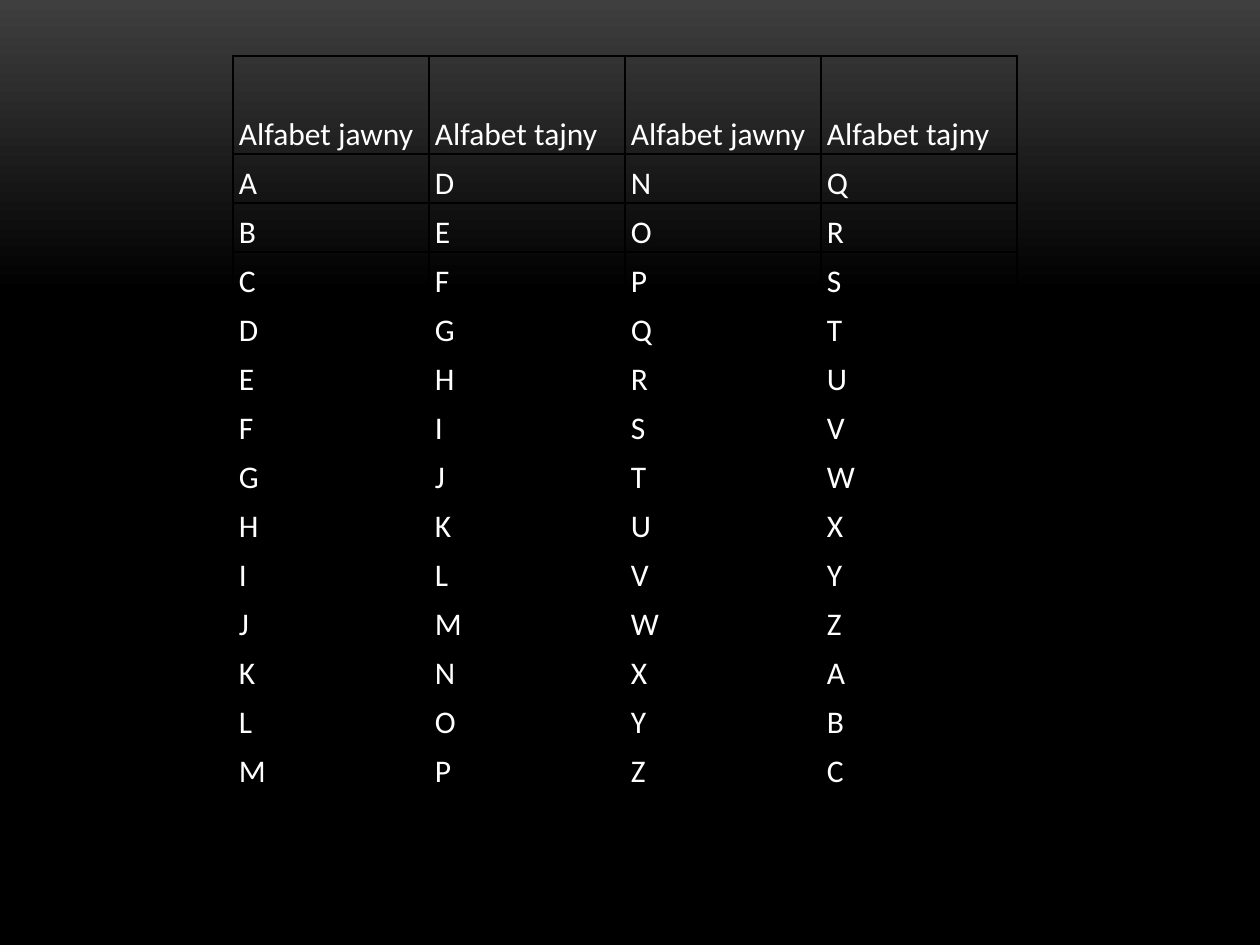
from lxml import etree
from pptx import Presentation
from pptx.dml.color import RGBColor
from pptx.enum.text import MSO_ANCHOR
from pptx.oxml.ns import qn
from pptx.util import Pt

PX = 914400 // 126
BOTTOM = MSO_ANCHOR.BOTTOM
ALPHABET = "ABCDEFGHIJKLMNOPQRSTUVWXYZ"
SHIFT = 3
HALF = len(ALPHABET) // 2
COLUMN_WIDTH, HEADER_HEIGHT, ROW_HEIGHT = 196, 98, 49
CELL_MARGIN = 6


def color(value):
    return RGBColor.from_string(value)


def add_borders(cell, value, width):
    properties = cell._tc.get_or_add_tcPr()
    for side in ("a:lnL", "a:lnR", "a:lnT", "a:lnB"):
        line = etree.SubElement(properties, qn(side), w=str(Pt(width)))
        fill = etree.SubElement(line, qn("a:solidFill"))
        etree.SubElement(fill, qn("a:srgbClr"), val=value)


presentation = Presentation()
presentation.slide_width = 1260 * PX
presentation.slide_height = 945 * PX
slide = presentation.slides.add_slide(presentation.slide_layouts[6])

# Background: dark grey fading down to black
background = slide.background.fill
background.gradient()
background.gradient_angle = 270
for stop, (position, value) in zip(background.gradient_stops,
                                   ((0, "3F3F3F"), (0.31, "000000"))):
    stop.position = position
    stop.color.rgb = color(value)

# Cipher rows: each half of the alphabet beside its shifted letters
secret = ALPHABET[SHIFT:] + ALPHABET[:SHIFT]
rows = [("Alfabet jawny", "Alfabet tajny") * 2]
rows += zip(ALPHABET[:HALF], secret[:HALF], ALPHABET[HALF:], secret[HALF:])

# Table grid
table = slide.shapes.add_table(
    len(rows), 4, 233 * PX, 56 * PX, 4 * COLUMN_WIDTH * PX,
    (HEADER_HEIGHT + HALF * ROW_HEIGHT) * PX).table
table.first_row = False
table.horz_banding = False
for column in table.columns:
    column.width = COLUMN_WIDTH * PX
for row in table.rows:
    row.height = ROW_HEIGHT * PX
table.rows[0].height = HEADER_HEIGHT * PX

# Table cells
for row_index, texts in enumerate(rows):
    for column_index, text in enumerate(texts):
        cell = table.cell(row_index, column_index)
        add_borders(cell, "000000", 1)
        cell.fill.background()
        cell.vertical_anchor = BOTTOM
        cell.margin_left = cell.margin_right = CELL_MARGIN * PX
        cell.margin_top = cell.margin_bottom = 0
        cell.text_frame.text = text
        paragraph = cell.text_frame.paragraphs[0]
        paragraph.line_spacing = 1.15
        paragraph.space_after = Pt(10)
        font = paragraph.runs[0].font
        font.name = "Calibri"
        font.size = Pt(18)
        font.color.rgb = color("FFFFFF")

presentation.save("out.pptx")
